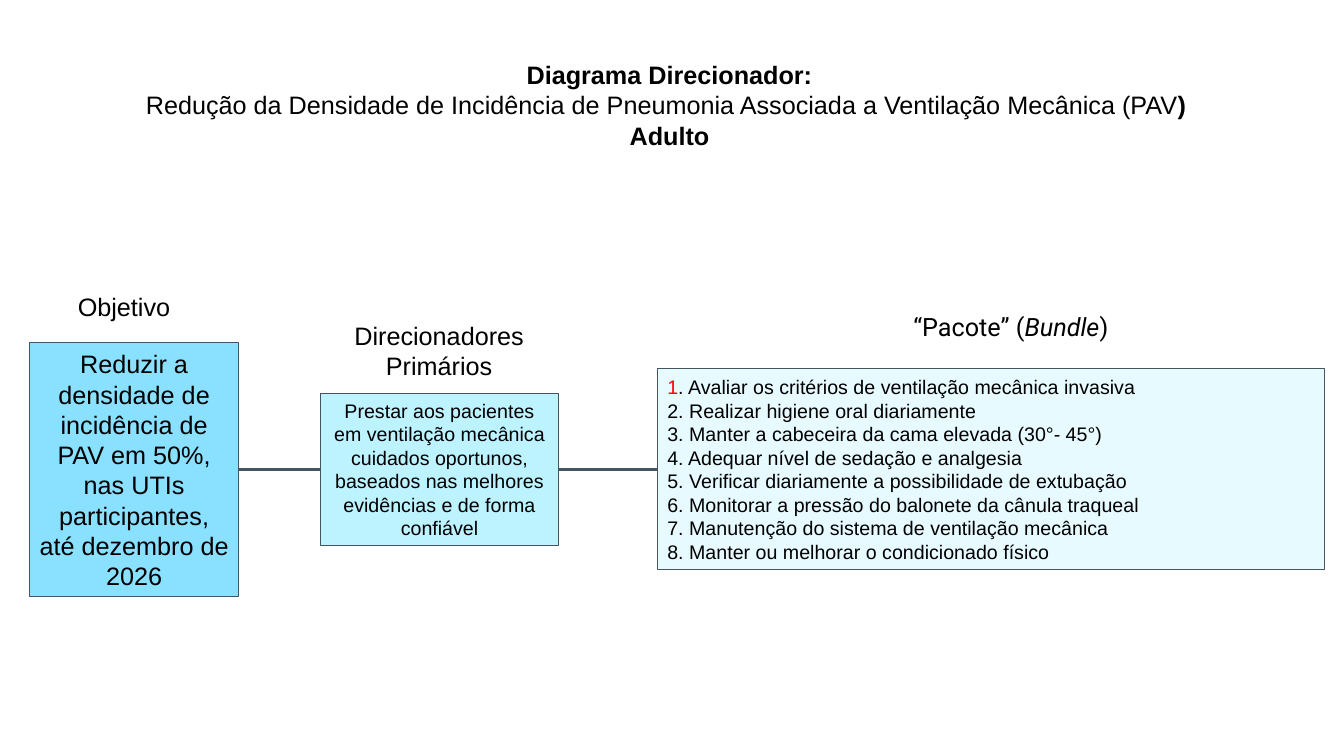
from pptx import Presentation
from pptx.dml.color import RGBColor
from pptx.enum.shapes import MSO_CONNECTOR, MSO_SHAPE
from pptx.enum.text import MSO_ANCHOR, MSO_AUTO_SIZE, PP_ALIGN
from pptx.oxml.ns import qn
from pptx.util import Inches, Pt

CENTER, LEFT = PP_ALIGN.CENTER, PP_ALIGN.LEFT
TOP, MIDDLE = MSO_ANCHOR.TOP, MSO_ANCHOR.MIDDLE
NO_AUTOFIT = MSO_AUTO_SIZE.NONE
RECTANGLE, STRAIGHT = MSO_SHAPE.RECTANGLE, MSO_CONNECTOR.STRAIGHT

COLORS = {
    "text": "000000",
    "accent": "FF0000",
    "outline": "455560",
    "goal": "89E0FF",
    "driver": "BDF2FF",
    "bundle": "E7FAFF",
}

TITLE = [
    [("Diagrama Direcionador:", {"bold": True})],
    [
        ("Redução da Densidade de Incidência de Pneumonia Associada a Ventilação Mecânica (PAV", {}),
        (") ", {"bold": True}),
    ],
    [("Adulto", {"bold": True})],
]
GOAL = "Reduzir a densidade de incidência de PAV em 50%, nas UTIs participantes, até dezembro de 2026"
DRIVER = (
    "Prestar aos pacientes em ventilação mecânica cuidados oportunos, "
    "baseados nas melhores evidências e de forma confiável"
)
BUNDLE_HEADING = [[("“Pacote” (", {}), ("Bundle", {"italic": True}), (")", {})]]
BUNDLE = [
    [("1", {"color": "accent"}), (". Avaliar os critérios de ventilação mecânica invasiva", {})],
    "2. Realizar higiene oral diariamente",
    "3. Manter a cabeceira da cama elevada (30°- 45°)",
    "4. Adequar nível de sedação e analgesia",
    "5. Verificar diariamente a possibilidade de extubação",
    "6. Monitorar a pressão do balonete da cânula traqueal",
    "7. Manutenção do sistema de ventilação mecânica",
    "8. Manter ou melhorar o condicionado físico",
]

GOAL_BOX = (0.29, 3.4, 2.08, 2.52)
DRIVER_BOX = (3.18, 3.9, 2.36, 1.51)
BUNDLE_BOX = (6.52, 3.66, 6.62, 1.99)


def rgb(name):
    """Return the named colour."""
    return RGBColor.from_string(COLORS[name])


def write_text(shape, paragraphs, size=18, font="Arial", align=CENTER, anchor=TOP):
    """Fill a shape with paragraphs, each a string or a list of (text, format) runs."""
    frame = shape.text_frame
    frame.word_wrap = True
    frame.auto_size = NO_AUTOFIT
    frame.vertical_anchor = anchor
    frame.margin_left = frame.margin_right = Inches(0.1)
    frame.margin_top = frame.margin_bottom = Inches(0.05)
    for index, runs in enumerate(paragraphs):
        paragraph = frame.add_paragraph() if index else frame.paragraphs[0]
        paragraph.alignment = align
        for text, style in [(runs, {})] if isinstance(runs, str) else runs:
            run = paragraph.add_run()
            run.text = text
            run.font.name = font
            run.font.size = Pt(size)
            run.font.bold = style.get("bold", False)
            run.font.italic = style.get("italic", False)
            run.font.color.rgb = rgb(style.get("color", "text"))


def place_title(slide, box):
    """Move the title placeholder to the box and write the title."""
    title = slide.shapes.title
    title.left, title.top, title.width, title.height = map(Inches, box)
    write_text(title, TITLE)


def add_heading(slide, box, paragraphs, **text_format):
    """Add a column heading in the box."""
    write_text(slide.shapes.add_textbox(*map(Inches, box)), paragraphs, **text_format)


def add_card(slide, box, fill, paragraphs, **text_format):
    """Add a filled, outlined rectangle with text."""
    card = slide.shapes.add_shape(RECTANGLE, *map(Inches, box))
    card.shadow.inherit = False
    card.fill.solid()
    card.fill.fore_color.rgb = rgb(fill)
    card.line.color.rgb = rgb("outline")
    card.line.width = Pt(0.75)
    write_text(card, paragraphs, anchor=MIDDLE, **text_format)


def add_link(slide, source, target):
    """Join two neighbouring boxes at mid-height of the first."""
    left, top, width, height = source
    y = Inches(top + height / 2)
    link = slide.shapes.add_connector(STRAIGHT, Inches(left + width), y, Inches(target[0]), y)
    link.line.color.rgb = rgb("outline")
    link.line.width = Pt(2.25)
    properties = link._element.spPr
    properties.append(properties.makeelement(qn("a:effectLst"), {}))


def main():
    """Build the driver diagram slide."""
    presentation = Presentation()
    presentation.slide_width, presentation.slide_height = Inches(13.33), Inches(7.5)
    slide = presentation.slides.add_slide(presentation.slide_layouts[5])
    place_title(slide, (0.14, 0.54, 13, 1.01))
    add_heading(slide, (0.29, 2.84, 1.88, 0.4), ["Objetivo"])
    add_card(slide, GOAL_BOX, "goal", [GOAL])
    add_heading(slide, (3.1, 3.13, 2.51, 0.71), ["Direcionadores Primários"])
    add_card(slide, DRIVER_BOX, "driver", [DRIVER], size=14)
    add_heading(slide, (8, 3.04, 4.05, 0.4), BUNDLE_HEADING, font="Roboto")
    add_card(slide, BUNDLE_BOX, "bundle", BUNDLE, size=14, align=LEFT)
    add_link(slide, GOAL_BOX, DRIVER_BOX)
    add_link(slide, DRIVER_BOX, BUNDLE_BOX)
    presentation.save("out.pptx")


if __name__ == "__main__":
    main()
